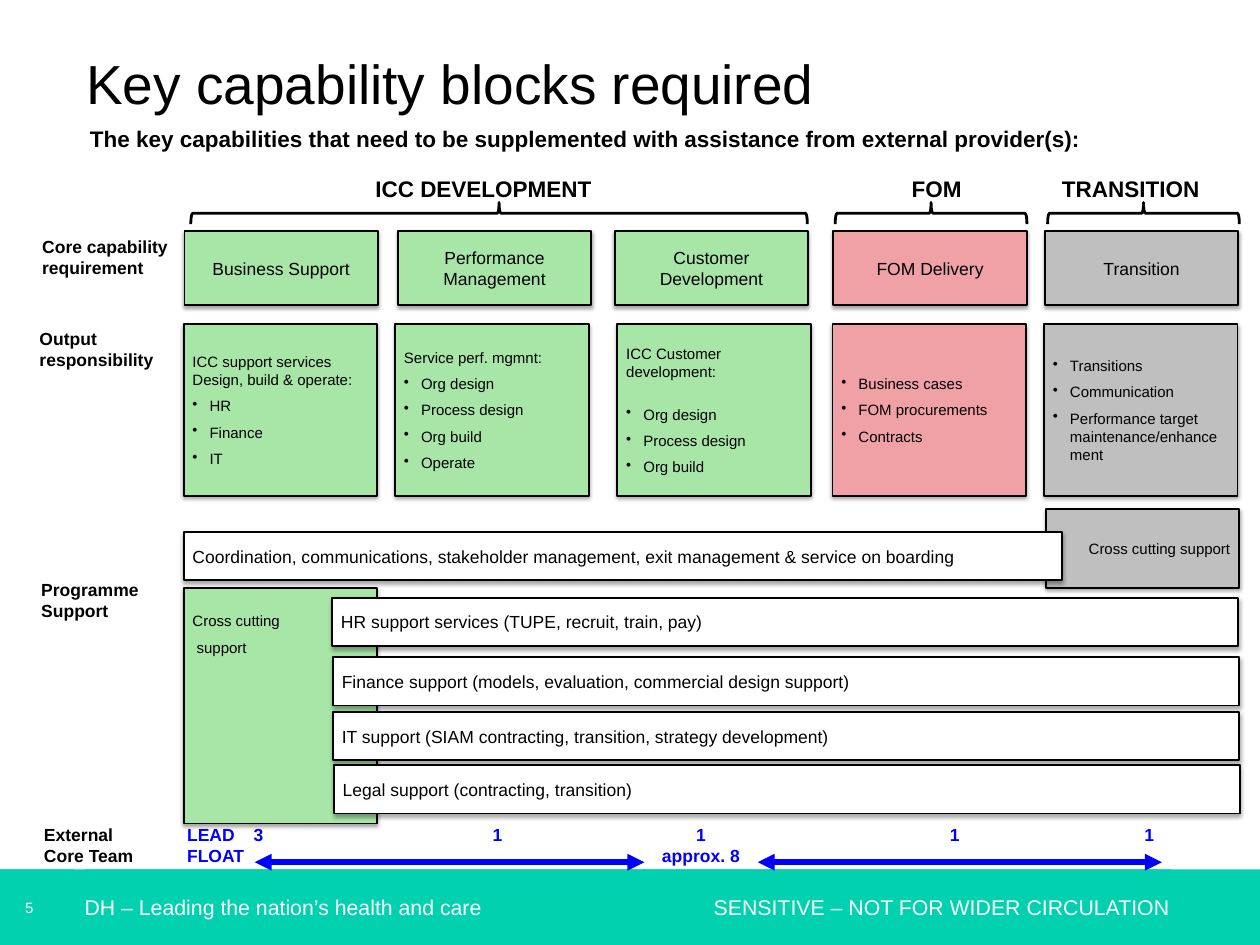
from lxml import etree
from pptx import Presentation
from pptx.dml.color import RGBColor
from pptx.enum.shapes import MSO_CONNECTOR, MSO_SHAPE
from pptx.enum.text import MSO_ANCHOR, PP_ALIGN
from pptx.oxml.ns import qn
from pptx.util import Inches, Pt

LEFT, CENTER, RIGHT = PP_ALIGN.LEFT, PP_ALIGN.CENTER, PP_ALIGN.RIGHT
TOP, MIDDLE = MSO_ANCHOR.TOP, MSO_ANCHOR.MIDDLE
RECTANGLE, LEFT_BRACE = MSO_SHAPE.RECTANGLE, MSO_SHAPE.LEFT_BRACE
STRAIGHT = MSO_CONNECTOR.STRAIGHT

BLACK, WHITE, BLUE, TEAL = "000000", "FFFFFF", "0000FF", "01D1AE"
GREEN, PINK, GREY = "A8E6A8", "F0A1A6", "BFBFBF"
DEFAULT_INSETS = (0.1, 0.05, 0.1, 0.05)
NO_INSETS = (0, 0, 0, 0)

COLUMNS = [
    (2.05, 2.04, GREEN, "Business Support",
     "ICC support services\nDesign, build & operate:", ["HR", "Finance", "IT"], 6.7),
    (4.42, 4.39, GREEN, "Performance Management",
     "Service perf. mgmnt:", ["Org design", "Process design", "Org build", "Operate"], 6.7),
    (6.83, 6.86, GREEN, "Customer Development",
     "ICC Customer development:", ["Org design", "Process design", "Org build"], 20),
    (9.26, 9.25, PINK, "FOM Delivery",
     None, ["Business cases", "FOM procurements", "Contracts"], 6.7),
    (11.61, 11.6, GREY, "Transition",
     None, ["Transitions", "Communication", "Performance target maintenance/enhancement"], 6.7),
]
GROUPS = [
    ("ICC DEVELOPMENT", 4.17, 2.78, 2.12, 6.85),
    ("FOM", 10.13, 0.65, 9.28, 2.13),
    ("TRANSITION", 11.8, 1.83, 11.64, 2.13),
]
ROW_LABELS = [
    ("Core capability\nrequirement", 0.37, 2.57, 1.61),
    ("Output\nresponsibility", 0.34, 3.6, 1.48),
    ("Programme\nSupport", 0.36, 6.38, 1.3),
]
SUPPORT_BARS = [
    ("HR support services (TUPE, recruit, train, pay)", 3.69, 6.64),
    ("Finance support (models, evaluation, commercial design support)", 3.7, 7.3),
    ("IT support (SIAM contracting, transition, strategy development)", 3.7, 7.91),
    ("Legal support (contracting, transition)", 3.71, 8.5),
]


def color(value):
    """Turn a hex string into a colour."""
    return RGBColor.from_string(value)


def add_text(paragraph, text, size, hex_color=BLACK, bold=False):
    """Add runs to a paragraph, with a line break at each newline."""
    for index, line in enumerate(text.split("\n")):
        if index:
            paragraph.add_line_break()
        run = paragraph.add_run()
        run.text = line
        run.font.name = "Arial"
        run.font.size = Pt(size)
        run.font.bold = bold
        run.font.color.rgb = color(hex_color)


def prepare_frame(shape, anchor=TOP, insets=DEFAULT_INSETS, wrap=True):
    """Set wrapping, anchor and insets, and return the text frame."""
    frame = shape.text_frame
    frame.word_wrap = wrap
    frame.vertical_anchor = anchor
    frame.margin_left, frame.margin_top, frame.margin_right, frame.margin_bottom = map(Inches, insets)
    return frame


def set_tabs(paragraph, stops):
    """Give a paragraph its tab stops."""
    tab_list = etree.SubElement(paragraph._p.get_or_add_pPr(), qn("a:tabLst"))
    for position, alignment in stops:
        etree.SubElement(tab_list, qn("a:tab"), pos=str(Inches(position)), algn=alignment)


def add_bullet(paragraph):
    """Give a paragraph a hanging bullet."""
    properties = paragraph._p.get_or_add_pPr()
    properties.set("marL", str(Inches(0.19)))
    properties.set("indent", str(Inches(-0.19)))
    etree.SubElement(properties, qn("a:buChar"), char="•")


def add_shadow(shape):
    """Add a soft shadow below a shape."""
    effects = shape._element.spPr.find(qn("a:effectLst"))
    shadow = etree.SubElement(effects, qn("a:outerShdw"), blurRad=str(Pt(3.1)),
                              dist=str(Pt(1.8)), dir="5400000", rotWithShape="0")
    tone = etree.SubElement(shadow, qn("a:srgbClr"), val=BLACK)
    etree.SubElement(tone, qn("a:alpha"), val="35000")


def add_rectangle(slide, box, fill, outlined=True):
    """Draw a filled rectangle, with outline and shadow if asked."""
    shape = slide.shapes.add_shape(RECTANGLE, *map(Inches, box))
    shape.shadow.inherit = False
    shape.fill.solid()
    shape.fill.fore_color.rgb = color(fill)
    if outlined:
        shape.line.color.rgb = color(BLACK)
        shape.line.width = Pt(1.5)
        add_shadow(shape)
    else:
        shape.line.fill.background()
    return shape


def add_block(slide, box, fill, text, size=14, alignment=LEFT):
    """Draw an outlined block with one paragraph."""
    frame = prepare_frame(add_rectangle(slide, box, fill), MIDDLE)
    paragraph = frame.paragraphs[0]
    paragraph.alignment = alignment
    add_text(paragraph, text, size)


def add_output_block(slide, box, fill, heading, bullets, heading_gap):
    """Draw a block with an optional heading and a bullet list."""
    frame = prepare_frame(add_rectangle(slide, box, fill), MIDDLE)
    items = ([heading] if heading else []) + bullets
    for index, item in enumerate(items):
        paragraph = frame.add_paragraph() if index else frame.paragraphs[0]
        paragraph.alignment = LEFT
        if index:
            paragraph.space_before = Pt(heading_gap if index == 1 else 6.7)
        if item != heading:
            add_bullet(paragraph)
        add_text(paragraph, item, 12)


def add_label(slide, box, text, size, bold=True, insets=NO_INSETS, wrap=True):
    """Place a plain text label."""
    shape = slide.shapes.add_textbox(*map(Inches, box))
    add_text(prepare_frame(shape, TOP, insets, wrap).paragraphs[0], text, size, bold=bold)


def add_brace(slide, left, top, width, height):
    """Draw an upward brace filling the given box."""
    box = (left + (width - height) / 2, top + (height - width) / 2, height, width)
    brace = slide.shapes.add_shape(LEFT_BRACE, *map(Inches, box))
    brace.rotation = 90
    brace.shadow.inherit = False
    brace.fill.background()
    brace.line.color.rgb = color(BLACK)
    brace.line.width = Pt(2.25)


def add_double_arrow(slide, left, right, y):
    """Draw a horizontal arrow with a head at each end."""
    arrow = slide.shapes.add_connector(STRAIGHT, *map(Inches, (left, y, right, y)))
    arrow.line.color.rgb = color(BLUE)
    arrow.line.width = Pt(4.5)
    line = arrow.line._get_or_add_ln()
    for end in ("a:headEnd", "a:tailEnd"):
        etree.SubElement(line, qn(end), type="triangle")
    etree.SubElement(arrow._element.spPr, qn("a:effectLst"))


def add_footer(slide, left, top, width, height):
    """Draw the footer band with page number and notices."""
    add_rectangle(slide, (left, top, width, height), TEAL, False)
    number = add_rectangle(slide, (left, top, 0.83, height), TEAL, False)
    notice = add_rectangle(slide, (left + 0.94, top, 12.07, height), TEAL, False)
    texts = [
        (number, "5", 12, (0.28, 0, 0, 0)),
        (notice, "DH – Leading the nation’s health and care\tSENSITIVE – NOT FOR WIDER CIRCULATION",
         17, NO_INSETS),
    ]
    for shape, text, size, insets in texts:
        paragraph = prepare_frame(shape, MIDDLE, insets).paragraphs[0]
        paragraph.alignment = LEFT
        set_tabs(paragraph, [(6.99, "l")])
        add_text(paragraph, text, size, WHITE)


def add_team_row(slide, left, top, width, height):
    """Place the external team counts and their arrows."""
    shape = slide.shapes.add_textbox(*map(Inches, (left, top, width, height)))
    paragraph = prepare_frame(shape).paragraphs[0]
    set_tabs(paragraph, [(1.59, "l"), (2.33, "l"), (5.04, "ctr"),
                         (7.3, "ctr"), (10.12, "ctr"), (12.28, "ctr")])
    add_text(paragraph, "External", 14, bold=True)
    add_text(paragraph, "\tLEAD\t3\t1\t1\t1\t1\n", 14, BLUE, True)
    add_text(paragraph, "Core Team", 14, bold=True)
    add_text(paragraph, "\tFLOAT\t\t\tapprox. 8", 14, BLUE, True)
    for start, end in ((2.44, 6.77), (8.03, 12.52)):
        add_double_arrow(slide, left + start, left + end, top + 0.47)


def add_capabilities(slide, header_top, output_top):
    """Draw the grouped capability columns."""
    for name, text_left, text_width, brace_left, brace_width in GROUPS:
        add_brace(slide, brace_left, header_top - 0.32, brace_width, 0.24)
        add_label(slide, (text_left, header_top - 0.63, text_width, 0.39), name, 18)
    for header_left, output_left, fill, name, heading, bullets, gap in COLUMNS:
        add_block(slide, (header_left, header_top, 2.15, 0.82), fill, name, alignment=CENTER)
        add_output_block(slide, (output_left, output_top, 2.15, 1.91), fill, heading, bullets, gap)


def add_programme_support(slide, left, top):
    """Draw the cross cutting blocks and the support bars."""
    add_block(slide, (left + 9.58, top, 2.15, 0.87), GREY, "Cross cutting support", 12, RIGHT)
    add_block(slide, (left, top + 0.25, 9.76, 0.54), WHITE,
              "Coordination, communications, stakeholder management, exit management & service on boarding")
    shape = add_rectangle(slide, (left, top + 0.87, 2.15, 2.62), GREEN)
    frame = prepare_frame(shape, TOP, (0.1, 0.27, 0.1, 0.05))
    for paragraph, text in ((frame.paragraphs[0], "Cross cutting"), (frame.add_paragraph(), " support")):
        paragraph.alignment = LEFT
        add_text(paragraph, text, 12)
    frame.paragraphs[1].space_before = Pt(6.7)
    for text, bar_left, bar_top in SUPPORT_BARS:
        add_block(slide, (bar_left, bar_top, 10.07, 0.54), WHITE, text)


def main():
    """Build and save the slide."""
    presentation = Presentation()
    presentation.slide_width, presentation.slide_height = Inches(14), Inches(10.5)
    slide = presentation.slides.add_slide(presentation.slide_layouts[6])
    add_footer(slide, 0, 9.66, 14, 0.84)
    add_label(slide, (0.96, 0.55, 12.07, 0.8), "Key capability blocks required", 44, False)
    add_label(slide, (1, 1.39, 12.07, 0.4),
              "The key capabilities that need to be supplemented with assistance from external provider(s):", 18)
    add_capabilities(slide, 2.57, 3.6)
    add_programme_support(slide, 2.04, 5.66)
    for text, left, top, width in ROW_LABELS:
        add_label(slide, (left, top, width, 0.57), text, 14, insets=DEFAULT_INSETS, wrap=False)
    add_team_row(slide, 0.39, 9.11, 13.42, 0.57)
    presentation.save("out.pptx")


if __name__ == "__main__":
    main()
